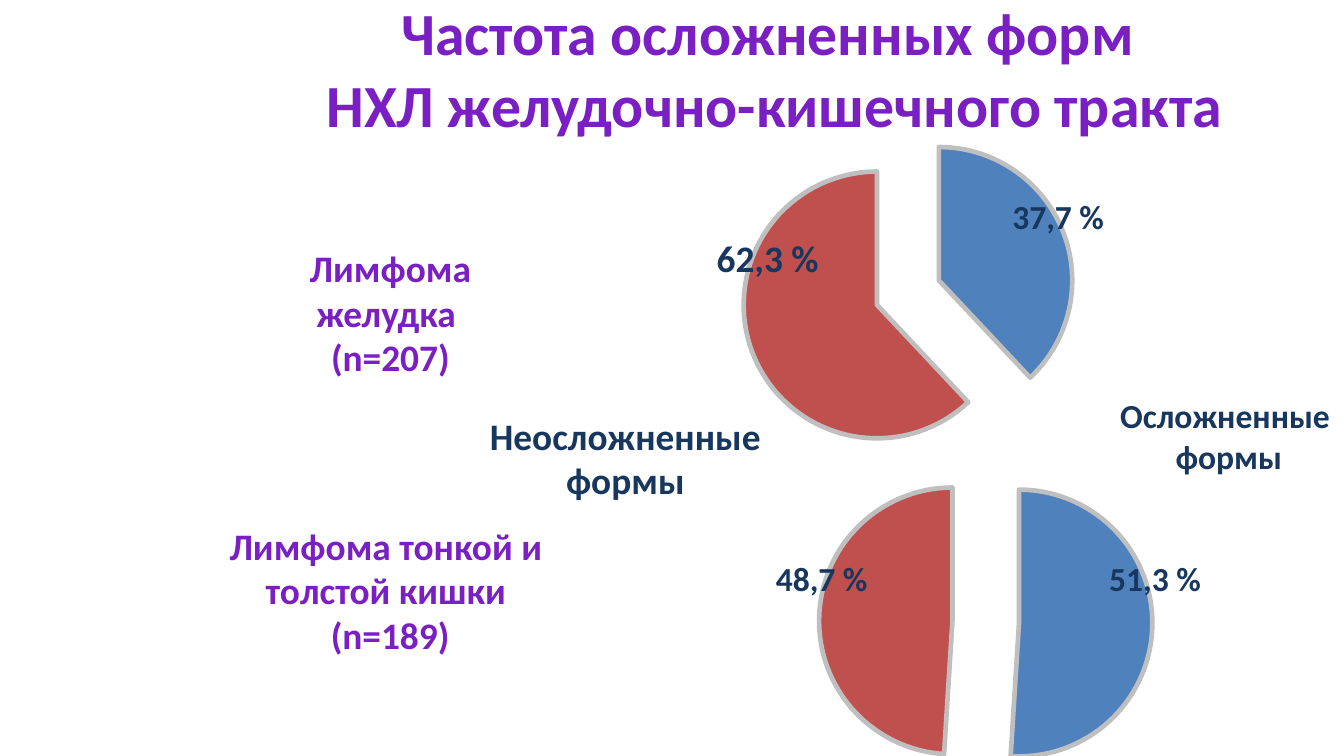
from pptx import Presentation
from pptx.chart.data import CategoryChartData
from pptx.dml.color import RGBColor
from pptx.enum.chart import XL_CHART_TYPE
from pptx.enum.text import MSO_AUTO_SIZE, PP_ALIGN
from pptx.oxml import parse_xml
from pptx.oxml.ns import nsdecls
from pptx.util import Cm, Pt

VIOLET = RGBColor(0x79, 0x1F, 0xC3)
NAVY = RGBColor(0x17, 0x37, 0x5E)
BLUE = RGBColor(0x4F, 0x81, 0xBD)
RED = RGBColor(0xC0, 0x50, 0x4D)
GREY = RGBColor(0xBF, 0xBF, 0xBF)
BLACK = RGBColor(0, 0, 0)
FONT = "Calibri"


class Board:
    def __init__(self, slide):
        self.slide = slide

    def text(self, lines, box, size, color, wrap=False):
        """Add a bold centred text box, one paragraph per line."""
        frame = self.slide.shapes.add_textbox(*map(Cm, box)).text_frame
        frame.text = "\n".join(lines)
        frame.word_wrap = wrap
        frame.auto_size = MSO_AUTO_SIZE.SHAPE_TO_FIT_TEXT
        for para in frame.paragraphs:
            para.alignment = PP_ALIGN.CENTER
            for run in para.runs:
                font = run.font
                font.name, font.size, font.bold = FONT, Pt(size), True
                font.color.rgb = color

    def pie(self, values, left, top):
        """Add a two-slice exploded pie: complicated, uncomplicated."""
        data = CategoryChartData()
        data.categories = ["1", "2"]
        data.add_series("Series 1", values)
        chart = self.slide.shapes.add_chart(
            XL_CHART_TYPE.PIE, Cm(left), Cm(top), Cm(14), Cm(7), data).chart
        chart.has_legend = False
        chart.has_title = False
        chart.font.name, chart.font.size = FONT, Pt(10)
        chart.font.color.rgb = BLACK
        plot = chart.plots[0]
        plot.vary_by_categories = True
        series = plot.series[0]
        for index, color in enumerate((BLUE, RED)):
            form = series.points[index].format
            form.fill.solid()
            form.fill.fore_color.rgb = color
            form.line.color.rgb = GREY
            form.line.width = Pt(2.5)
        for point in series._element.dPt_lst:
            shift = parse_xml(f'<c:explosion {nsdecls("c")} val="25"/>')
            point.find(point.spPr.tag).addprevious(shift)


def main():
    deck = Presentation()
    deck.slide_width, deck.slide_height = Cm(25.4), Cm(14.28)
    board = Board(deck.slides.add_slide(deck.slide_layouts[6]))

    board.pie((38, 62), 10.16, 2.03)
    board.pie((51, 49), 11.63, 8.25)

    board.text(["Частота осложненных форм ", "НХЛ желудочно-кишечного тракта"],
               (5.13, -0.2, 19.02, 3), 32, VIOLET, wrap=True)
    board.text(["Лимфома", "желудка ", "(n=207)"],
               (5.59, 4.5, 3.58, 2.82), 20, VIOLET)
    board.text(["Лимфома тонкой и ", "толстой кишки ", "(n=189)"],
               (4.06, 9.75, 6.63, 2.82), 20, VIOLET)
    board.text(["Неосложненные", "формы"], (8.99, 7.67, 5.66, 1.96), 20, NAVY)
    board.text(["Осложненные ", "формы"], (20.9, 7.34, 4.65, 1.8), 18, NAVY)

    board.text(["62,3 %"], (13.28, 4.32, 2.46, 1.12), 20, NAVY)
    for share, left, top in (("37,7 %", 18.87, 3.58),
                             ("48,7 %", 14.4, 10.41),
                             ("51,3 %", 20.7, 10.41)):
        board.text([share], (left, top, 2.26, 1.02), 18, NAVY)

    deck.save("out.pptx")


if __name__ == "__main__":
    main()
